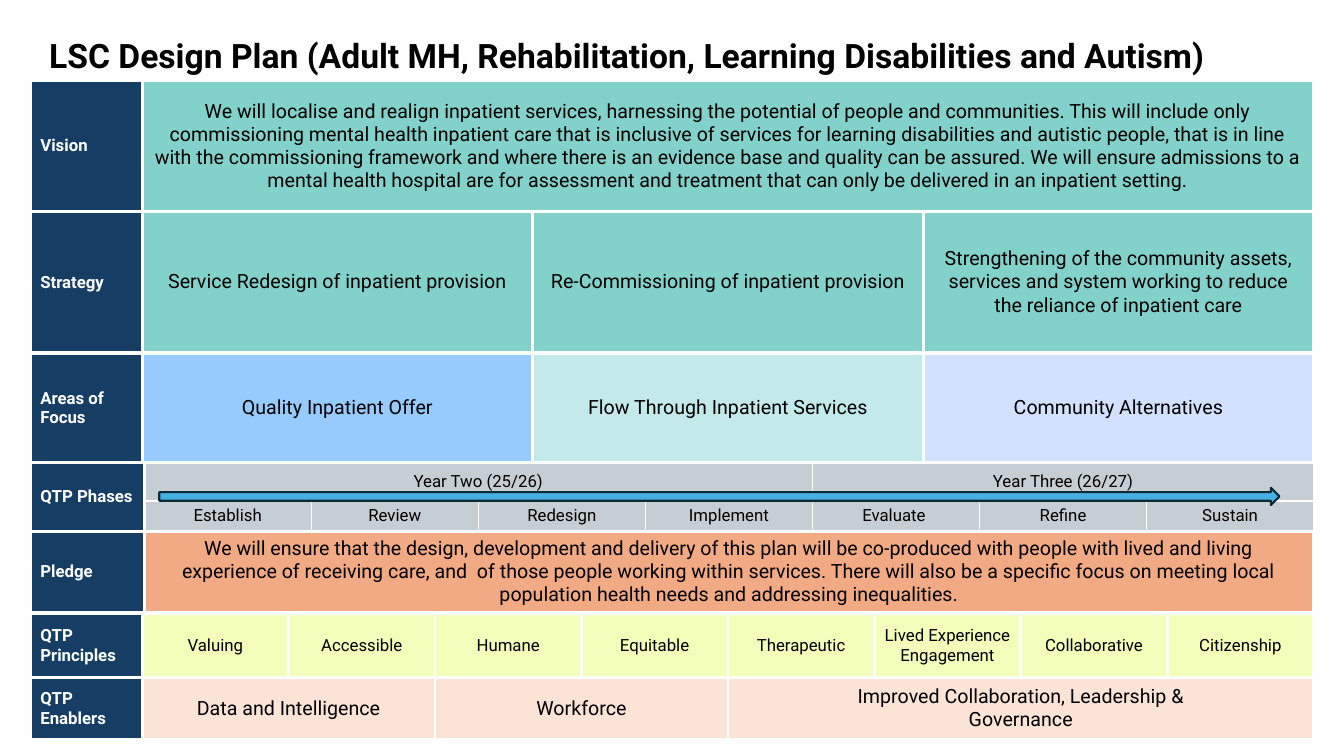
import lxml.etree
import pptx
import pptx.dml.color
import pptx.enum.shapes
import pptx.enum.text
import pptx.oxml.ns
import pptx.util

Inches = pptx.util.Inches
Pt = pptx.util.Pt
FONT = "Roboto"
NAVY, TEAL, GREY, ORANGE = "163E64", "82D1CB", "C7CED3", "F2AA84"
LIME, PEACH, WHITE, BLACK = "F3FEBA", "FBE3D6", "FFFFFF", "000000"
LEFT, WIDTH = 0.3, 12.73

VISION = (
    "We will localise and realign inpatient services, harnessing the potential of people and "
    "communities. This will include only commissioning mental health inpatient care that is "
    "inclusive of services for learning disabilities and autistic people, that is in line with "
    "the commissioning framework and where there is an evidence base and quality can be assured. "
    "We will ensure admissions to a mental health hospital are for assessment and treatment that "
    "can only be delivered in an inpatient setting."
)
STRATEGIES = [
    "Service Redesign of inpatient provision",
    "Re-Commissioning of inpatient provision",
    "Strengthening of the community assets, services and system working to reduce the reliance "
    "of inpatient care",
]
FOCUS_AREAS = [
    ("Quality Inpatient Offer", "97CBFF"),
    ("Flow Through Inpatient Services", "C4E9EA"),
    ("Community Alternatives", "D1E1FF"),
]
PHASES = ["Establish", "Review", "Redesign", "Implement", "Evaluate ", "Refine", "Sustain"]
PLEDGE = (
    "We will ensure that the design, development and delivery of this plan will be co-produced "
    "with people with lived and living experience of receiving care, and  of those people working "
    "within services. There will also be a specific focus on meeting local population health "
    "needs and addressing inequalities."
)
PRINCIPLES = ["Valuing", "Accessible", "Humane", "Equitable", "Therapeutic",
              "Lived Experience Engagement", "Collaborative", "Citizenship"]


def rgb(value):
    """Return the colour for a hex string."""
    return pptx.dml.color.RGBColor.from_string(value)


def set_font(p, size, color, bold):
    """Set the font of a paragraph."""
    p.font.name = FONT
    p.font.size = Pt(size)
    p.font.bold = bold
    p.font.color.rgb = rgb(color)


def set_borders(cell, side_width):
    """Give a cell white borders, with its own width at the sides."""
    tc_pr = cell._tc.get_or_add_tcPr()
    widths = {"a:lnL": side_width, "a:lnR": side_width, "a:lnT": 2.25, "a:lnB": 2.25}
    for i, (tag, width) in enumerate(widths.items()):
        ln = lxml.etree.Element(pptx.oxml.ns.qn(tag), w=str(Pt(width)))
        fill = lxml.etree.SubElement(ln, pptx.oxml.ns.qn("a:solidFill"))
        lxml.etree.SubElement(fill, pptx.oxml.ns.qn("a:srgbClr"), val=WHITE)
        tc_pr.insert(i, ln)


def style_cell(cell, text, fill, size):
    """Write and format one cell; navy cells are row labels."""
    is_label = fill == NAVY
    cell.text = text
    cell.vertical_anchor = pptx.enum.text.MSO_ANCHOR.MIDDLE
    cell.fill.solid()
    cell.fill.fore_color.rgb = rgb(fill)
    set_borders(cell, 1 if fill == GREY else 2.25)
    if not text:
        cell.margin_top = cell.margin_bottom = 0
    align = pptx.enum.text.PP_ALIGN
    for p in cell.text_frame.paragraphs:
        p.alignment = align.LEFT if is_label else align.CENTER
        set_font(p, size, WHITE if is_label else BLACK, is_label)


def add_band(slide, top, heights, columns, rows, label_width=1.11):
    """Add a table whose rows hold a label and (text, fill, size, span) cells."""
    frame = slide.shapes.add_table(len(rows), columns + 1, Inches(LEFT), Inches(top),
                                   Inches(WIDTH), Inches(sum(heights)))
    table = frame.table
    table.first_row = table.horz_banding = False
    table.columns[0].width = Inches(label_width)
    for c in range(1, columns + 1):
        table.columns[c].width = Inches((WIDTH - label_width) / columns)
    for r, (height, (label, cells)) in enumerate(zip(heights, rows)):
        table.rows[r].height = Inches(height)
        c = 0
        for text, fill, size, span in [(label, NAVY, 12, 1), *cells]:
            for covered in range(c + 1, c + span):
                style_cell(table.cell(r, covered), "", fill, size)
            style_cell(table.cell(r, c), text, fill, size)
            if span > 1:
                table.cell(r, c).merge(table.cell(r, c + span - 1))
            c += span
    return table


def add_title(slide, left, top, width, height):
    """Add the slide title."""
    tf = slide.shapes.add_textbox(Inches(left), Inches(top), Inches(width), Inches(height)).text_frame
    tf.word_wrap = True
    p = tf.paragraphs[0]
    p.text = "LSC Design Plan (Adult MH, Rehabilitation, Learning Disabilities and Autism)"
    set_font(p, 24, BLACK, True)


def add_direction(slide, top):
    """Add the vision, strategy and areas of focus."""
    add_band(slide, top, [1.3, 1.4], 3, [
        ("Vision", [(VISION, TEAL, 14, 3)]),
        ("Strategy", [(text, TEAL, 14, 1) for text in STRATEGIES]),
    ])
    add_band(slide, top + 2.71, [1.08], 3, [
        ("Areas of Focus", [(text, fill, 14, 1) for text, fill in FOCUS_AREAS]),
    ])


def add_phases(slide, top):
    """Add the phases with their timeline arrow, and the pledge."""
    table = add_band(slide, top, [0.38, 0.3, 0.8], len(PHASES), [
        ("QTP Phases", [("Year Two (25/26)", GREY, 12, 4), ("Year Three (26/27)", GREY, 12, 3)]),
        ("", [(text, GREY, 12, 1) for text in PHASES]),
        ("Pledge", [(PLEDGE, ORANGE, 14, len(PHASES))]),
    ], label_width=1.13)
    table.cell(0, 0).merge(table.cell(1, 0))
    sp = slide.shapes.add_shape(pptx.enum.shapes.MSO_SHAPE.RIGHT_ARROW, Inches(LEFT + 1.28),
                                Inches(top + 0.25), Inches(11.11), Inches(0.17))
    sp.shadow.inherit = False
    sp.fill.solid()
    sp.fill.fore_color.rgb = rgb("46B1E1")
    sp.line.color.rgb = rgb("092A39")
    sp.line.width = Pt(1.5)


def add_foundations(slide, top):
    """Add the principles and enablers."""
    add_band(slide, top, [0.63, 0.62], len(PRINCIPLES), [
        ("QTP Principles", [(text, LIME, 12, 1) for text in PRINCIPLES]),
        ("QTP\nEnablers", [
            ("Data and Intelligence", PEACH, 14, 2),
            ("Workforce", PEACH, 14, 2),
            ("Improved Collaboration, Leadership &\nGovernance", PEACH, 14, 4),
        ]),
    ])


def main():
    """Build the design plan slide."""
    prs = pptx.Presentation()
    prs.slide_width, prs.slide_height = Inches(13.33), Inches(7.5)
    slide = prs.slides.add_slide(prs.slide_layouts[6])
    add_direction(slide, 0.8)
    add_foundations(slide, 6.09)
    add_title(slide, 0.39, 0.3, 12.94, 0.5)
    add_phases(slide, 4.59)
    prs.save("out.pptx")


if __name__ == "__main__":
    main()
